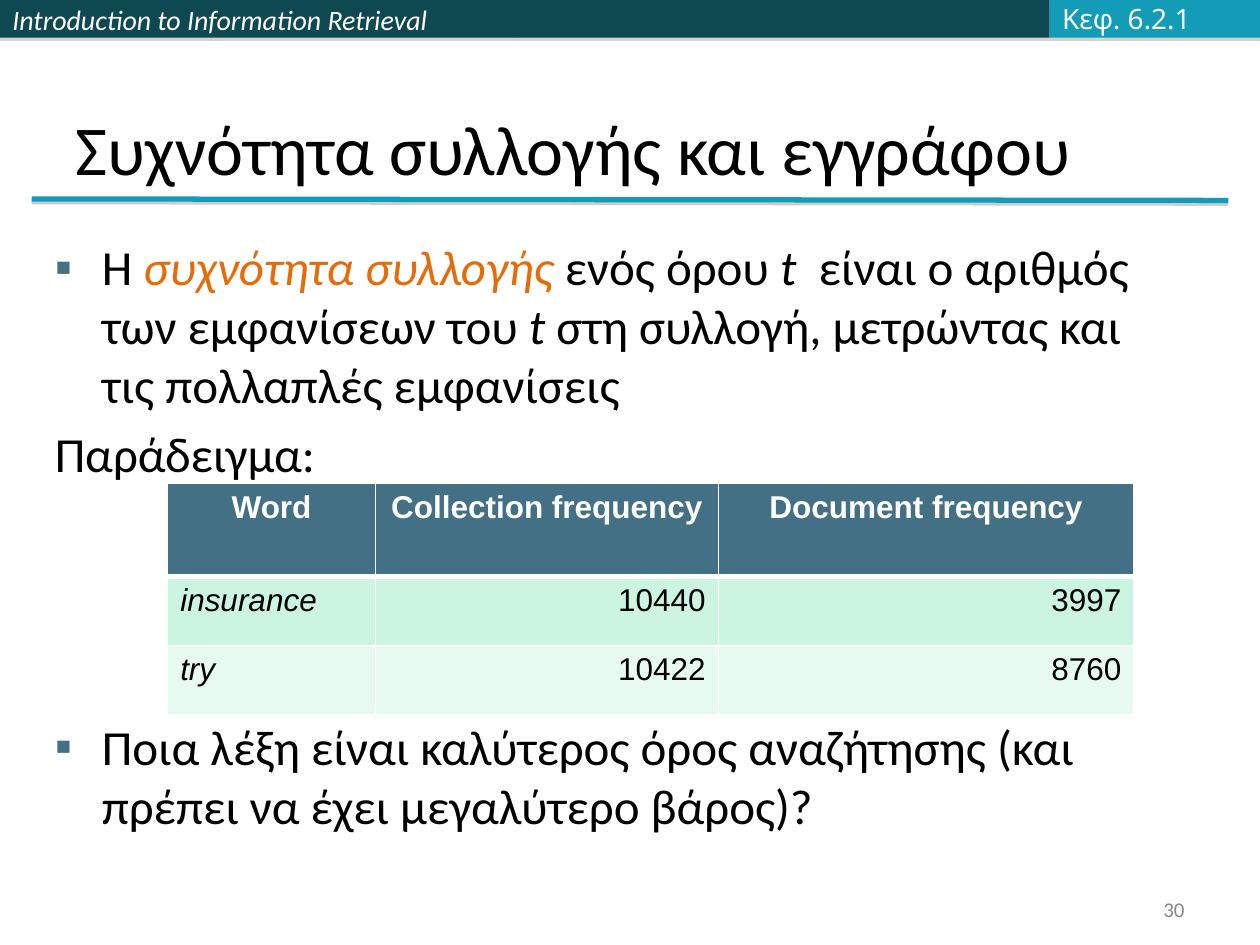
from pptx import Presentation
from pptx.dml.color import RGBColor
from pptx.enum import shapes, text
from pptx.oxml import parse_xml
from pptx.oxml.ns import nsdecls
from pptx.util import Cm, Pt

WHITE = RGBColor(0xFF, 0xFF, 0xFF)
BLACK = RGBColor(0, 0, 0)
DARK = RGBColor(0x0E, 0x48, 0x51)
TEAL = RGBColor(0x13, 0x9C, 0xB7)
SLATE = RGBColor(0x43, 0x70, 0x85)
ORANGE = RGBColor(0xE4, 0x6C, 0x0A)
GRAY = RGBColor(0x89, 0x89, 0x89)
PALE = RGBColor(0xFB, 0xFC, 0xFF)
MINT = RGBColor(0xCB, 0xF5, 0xE1)
LIGHT_MINT = RGBColor(0xE7, 0xFA, 0xF1)

COURSE = "Introduction to Information Retrieval"
CHAPTER = "Κεφ. 6.2.1"
TITLE = "Συχνότητα συλλογής και εγγράφου"
NUMBER = "30"
BODY = [
    (True, 5.6, [
        ("Η ", BLACK, False),
        ("συχνότητα συλλογής ", ORANGE, True),
        ("ενός όρου ", BLACK, False),
        ("t ", BLACK, True),
        (" είναι ο αριθμός των εμφανίσεων του ", BLACK, False),
        ("t ", BLACK, True),
        ("στη συλλογή, μετρώντας και τις πολλαπλές εμφανίσεις", BLACK, False),
    ]),
    (False, 5.6, [("Παράδειγμα:", BLACK, False)]),
    (True, 134, [("Ποια λέξη είναι καλύτερος όρος αναζήτησης (και πρέπει να "
                  "έχει μεγαλύτερο βάρος)?", BLACK, False)]),
]
ROWS = [
    ("Word", "Collection frequency", "Document frequency"),
    ("insurance", "10440", "3997"),
    ("try", "10422", "8760"),
]
ROW_FILLS = [SLATE, MINT, LIGHT_MINT]
COL_WIDTHS = [4.19, 6.91, 8.38]
ROW_HEIGHTS = [1.88, 1.4, 1.4]
HEADER_H = 0.76
HEADER_BARS = [(10.36, DARK, COURSE), (10.8, DARK, ""), (4.24, TEAL, "")]


def add_run(p, words, size, color, font="Calibri", italic=False, bold=False):
    r = p.add_run()
    r.text = words
    r.font.size = Pt(size)
    r.font.name = font
    r.font.color.rgb = color
    r.font.italic = italic
    r.font.bold = bold


def add_shadow(s, alpha, distance):
    s._element.spPr.append(parse_xml(
        f'<a:effectLst {nsdecls("a")}><a:outerShdw blurRad="0" '
        f'dist="{Pt(distance)}" dir="5400000" rotWithShape="0">'
        f'<a:srgbClr val="808080"><a:alpha val="{alpha * 1000}"/></a:srgbClr>'
        '</a:outerShdw></a:effectLst>'))


def place(s, x, y, w, h):
    s.left, s.top, s.width, s.height = Cm(x), Cm(y), Cm(w), Cm(h)


def add_bullet(p):
    pPr = p._p.get_or_add_pPr()
    pPr.set("marL", str(Cm(0.95)))
    pPr.set("indent", str(Cm(-0.95)))
    for xml in (f'<a:buClr {nsdecls("a")}><a:srgbClr val="{SLATE}"/></a:buClr>',
                f'<a:buFont {nsdecls("a")} typeface="Arial"/>',
                f'<a:buChar {nsdecls("a")} char="▪"/>'):
        pPr.append(parse_xml(xml))


def remove_bullet(p):
    pPr = p._p.get_or_add_pPr()
    pPr.set("marL", "0")
    pPr.set("indent", "0")
    pPr.append(parse_xml(f'<a:buNone {nsdecls("a")}/>'))


def set_borders(cell, top, bottom):
    tcPr = cell._tc.get_or_add_tcPr()
    for i, (side, width) in enumerate(
            [("L", 1), ("R", 1), ("T", top), ("B", bottom)]):
        tcPr.insert(i, parse_xml(
            f'<a:ln{side} {nsdecls("a")} w="{Pt(width)}"><a:solidFill>'
            f'<a:srgbClr val="{WHITE}"/></a:solidFill></a:ln{side}>'))


def add_header(slide):
    x = 0
    for width, color, words in HEADER_BARS:
        s = slide.shapes.add_shape(shapes.MSO_SHAPE.RECTANGLE,
                                   Cm(x), 0, Cm(width), Cm(HEADER_H))
        s.fill.solid()
        s.fill.fore_color.rgb = color
        s.line.fill.background()
        add_shadow(s, 35, 1.8)
        if words:
            tf = s.text_frame
            tf.margin_left = Cm(0.25)
            tf.vertical_anchor = text.MSO_ANCHOR.MIDDLE
            tf.paragraphs[0].alignment = text.PP_ALIGN.LEFT
            add_run(tf.paragraphs[0], words, 16, WHITE, italic=True)
        x += width
    rule = slide.shapes.add_connector(shapes.MSO_CONNECTOR.STRAIGHT,
                                      Cm(0.64), Cm(4.01), Cm(24.76), Cm(4.04))
    rule.line.color.rgb = TEAL
    rule.line.width = Pt(3)
    add_shadow(rule, 38, 1.6)


def add_title(slide):
    s = slide.shapes.title
    place(s, 1.27, 0.76, 22.86, 3.18)
    tf = s.text_frame
    tf.auto_size = text.MSO_AUTO_SIZE.NONE
    tf.vertical_anchor = text.MSO_ANCHOR.BOTTOM
    tf.paragraphs[0].alignment = text.PP_ALIGN.LEFT
    add_run(tf.paragraphs[0], TITLE, 40, BLACK)


def add_body(slide):
    s = slide.placeholders[1]
    place(s, 0.85, 4.65, 23.28, 13.97)
    tf = s.text_frame
    tf.auto_size = text.MSO_AUTO_SIZE.NONE
    for i, (bulleted, before, runs) in enumerate(BODY):
        p = tf.paragraphs[0] if i == 0 else tf.add_paragraph()
        p.space_before = Pt(before)
        (add_bullet if bulleted else remove_bullet)(p)
        for words, color, italic in runs:
            add_run(p, words, 28, color, italic=italic)


def add_frequencies(slide):
    table = slide.shapes.add_table(
        len(ROWS), len(COL_WIDTHS), Cm(3.38), Cm(9.74),
        Cm(sum(COL_WIDTHS)), Cm(sum(ROW_HEIGHTS))).table
    for col, width in zip(table.columns, COL_WIDTHS):
        col.width = Cm(width)
    for i, (row, height) in enumerate(zip(table.rows, ROW_HEIGHTS)):
        row.height = Cm(height)
        head = i == 0
        for j, words in enumerate(ROWS[i]):
            cell = table.cell(i, j)
            cell.fill.solid()
            cell.fill.fore_color.rgb = ROW_FILLS[i]
            set_borders(cell, 3 if i == 1 else 1, 3 if head else 1)
            p = cell.text_frame.paragraphs[0]
            p.alignment = (text.PP_ALIGN.CENTER if head else
                           text.PP_ALIGN.RIGHT if j else text.PP_ALIGN.LEFT)
            add_run(p, words, 18, WHITE if head else BLACK, "Arial",
                    italic=not head and j == 0, bold=head)


def add_label(slide, box, words, size, color, font, align, wrap):
    s = slide.shapes.add_textbox(*map(Cm, box))
    tf = s.text_frame
    tf.word_wrap = wrap
    tf.vertical_anchor = text.MSO_ANCHOR.MIDDLE
    tf.paragraphs[0].alignment = align
    add_run(tf.paragraphs[0], words, size, color, font)


def main():
    prs = Presentation()
    prs.slide_width, prs.slide_height = Cm(25.4), Cm(19.05)
    slide = prs.slides.add_slide(prs.slide_layouts[1])
    add_header(slide)
    add_title(slide)
    add_body(slide)
    add_frequencies(slide)
    add_label(slide, (21.16, -0.1, 3.33, 0.94), CHAPTER, 16, PALE,
              "Noto Sans", text.PP_ALIGN.LEFT, False)
    add_label(slide, (18.2, 17.98, 5.93, 0.69), NUMBER, 12, GRAY,
              "Calibri", text.PP_ALIGN.RIGHT, True)
    prs.save("out.pptx")


if __name__ == "__main__":
    main()
